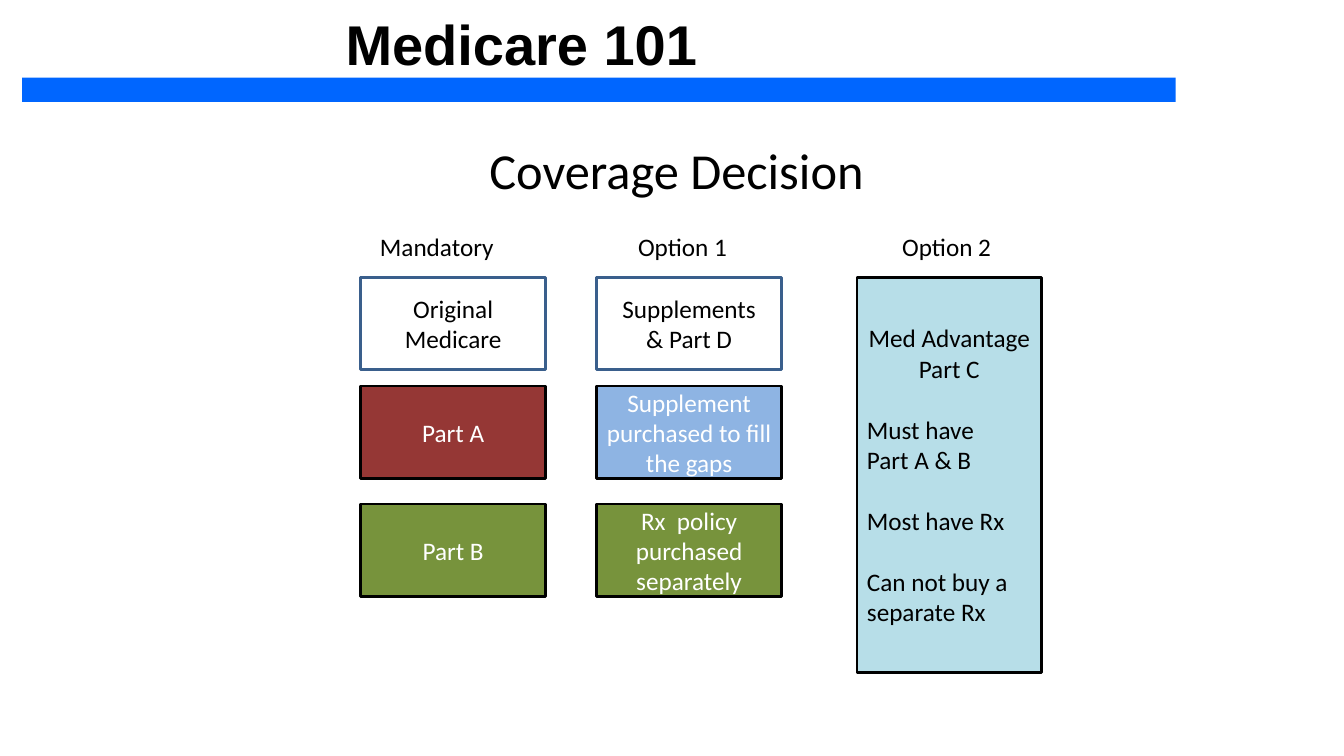
import pptx
import pptx.util
import pptx.dml.color
import pptx.enum.shapes
import pptx.enum.text

Inches = pptx.util.Inches
Pt = pptx.util.Pt
ALIGN = pptx.enum.text.PP_ALIGN
ANCHOR = pptx.enum.text.MSO_ANCHOR
BLACK = "000000"
WHITE = "FFFFFF"
OUTLINE = "3A5F8C"
GREEN = "77933C"
CARD_WIDTH = 1.83
CARD_HEIGHT = 0.92
MANDATORY_LEFT, OPTION_1_LEFT, OPTION_2_LEFT = 3.58, 5.92, 8.5
ROW_TOPS = (2.75, 3.83, 5)


def color(value):
    return pptx.dml.color.RGBColor.from_string(value)


def add_line(frame, number, text, size, ink, align, font="Calibri", bold=False, before=0):
    para = frame.add_paragraph() if number else frame.paragraphs[0]
    para.alignment = align
    if before:
        para.space_before = Pt(before)
    span = para.add_run()
    span.text = text
    span.font.name = font
    span.font.size = Pt(size)
    span.font.bold = bold
    span.font.color.rgb = color(ink)


def add_label(page, left, top, width, height, text, size, align=ALIGN.CENTER, font="Calibri", bold=False):
    box = page.shapes.add_textbox(Inches(left), Inches(top), Inches(width), Inches(height))
    box.text_frame.word_wrap = True
    add_line(box.text_frame, 0, text, size, BLACK, align, font, bold)


def add_rectangle(page, left, top, width, height, fill=None, line=None):
    box = page.shapes.add_shape(
        pptx.enum.shapes.MSO_SHAPE.RECTANGLE, Inches(left), Inches(top), Inches(width), Inches(height)
    )
    box.shadow.inherit = False
    if fill:
        box.fill.solid()
        box.fill.fore_color.rgb = color(fill)
    else:
        box.fill.background()
    if line:
        box.line.color.rgb = color(line)
        box.line.width = Pt(2)
    else:
        box.line.fill.background()
    return box


def add_card(page, left, top, height, lines, fill, line, ink):
    frame = add_rectangle(page, left, top, CARD_WIDTH, height, fill, line).text_frame
    frame.word_wrap = True
    frame.vertical_anchor = ANCHOR.MIDDLE
    for number, (text, align, before) in enumerate(lines):
        add_line(frame, number, text, 18, ink, align, before=before)


def add_column(page, left, cards):
    for top, (texts, fill, line, ink) in zip(ROW_TOPS, cards):
        lines = [(text, ALIGN.CENTER, 0) for text in texts]
        add_card(page, left, top, CARD_HEIGHT, lines, fill, line, ink)


def main():
    deck = pptx.Presentation()
    deck.slide_width = Inches(13.33)
    deck.slide_height = Inches(7.5)
    page = deck.slides.add_slide(deck.slide_layouts[6])

    add_label(page, 0.89, 0.05, 8.56, 0.77, "Medicare 101", 40, font="Arial", bold=True)
    add_rectangle(page, 0.22, 0.77, 11.44, 0.24, "0066FF")
    add_label(page, 2.92, 1.33, 7.58, 0.71, "Coverage Decision", 36)
    for text, left in (("Mandatory", 3.67), ("Option 1", 6.23), ("Option 2", 8.85)):
        add_label(page, left, 2.25, 1.67, 0.4, text, 18, ALIGN.LEFT)

    add_column(page, MANDATORY_LEFT, [
        (["Original", "Medicare"], None, OUTLINE, BLACK),
        (["Part A"], "953735", BLACK, WHITE),
        (["Part B"], GREEN, BLACK, WHITE),
    ])
    add_column(page, OPTION_1_LEFT, [
        (["Supplements", "& Part D"], None, OUTLINE, BLACK),
        (["Supplement purchased to fill the gaps"], "8EB4E3", BLACK, WHITE),
        (["Rx  policy purchased separately"], GREEN, BLACK, WHITE),
    ])
    advantage = [
        ("Med Advantage", ALIGN.CENTER, 0),
        ("Part C", ALIGN.CENTER, 0),
        ("Must have", ALIGN.LEFT, 22),
        ("Part A & B", ALIGN.LEFT, 0),
        ("Most have Rx", ALIGN.LEFT, 22),
        ("Can not buy a separate Rx", ALIGN.LEFT, 22),
    ]
    add_card(page, OPTION_2_LEFT, ROW_TOPS[0], 3.92, advantage, "B7DEE8", BLACK, BLACK)

    deck.save("out.pptx")


if __name__ == "__main__":
    main()
